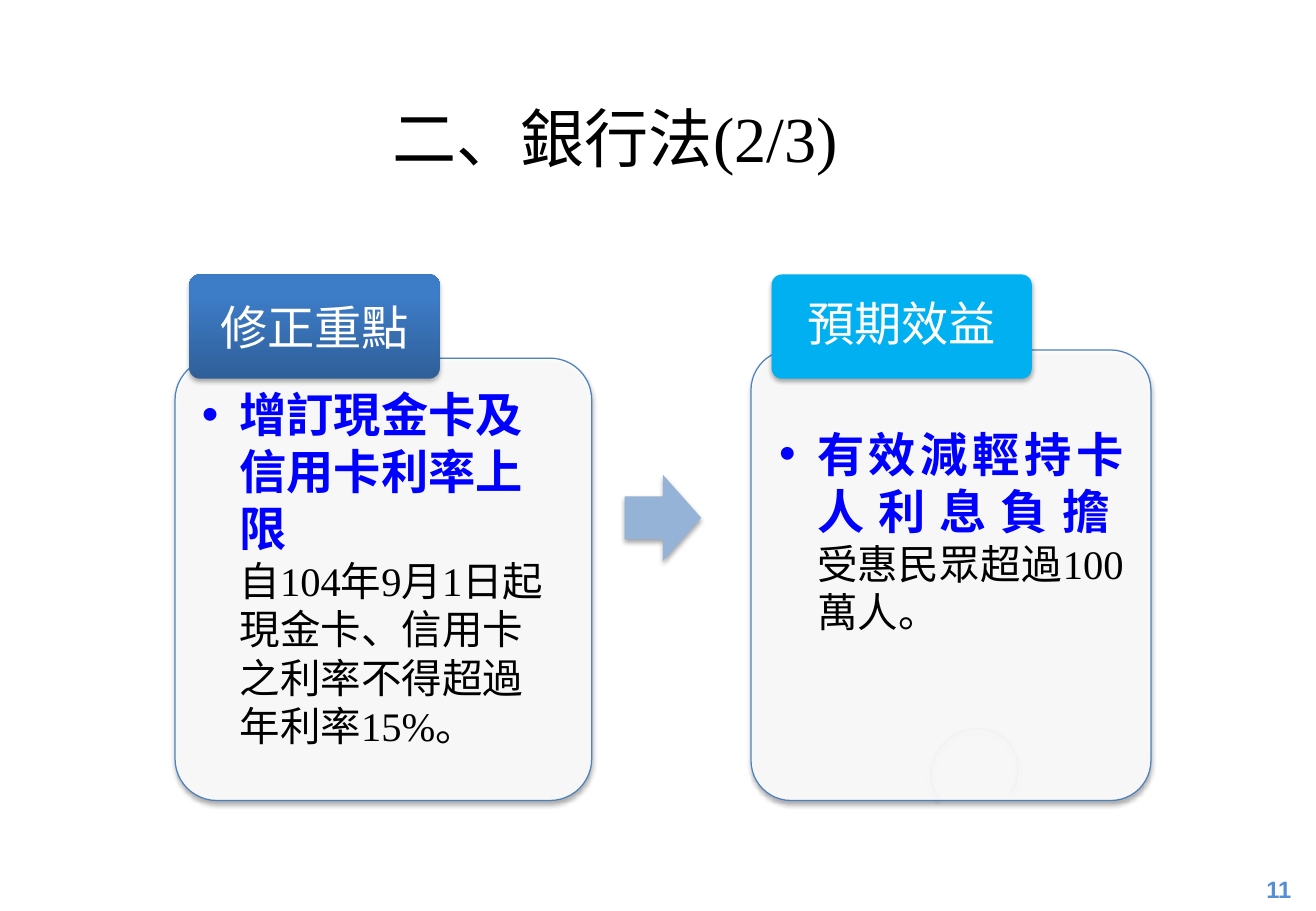
from lxml import etree
from pptx import Presentation
from pptx.dml.color import RGBColor
from pptx.enum import shapes, text
from pptx.oxml import ns
from pptx.util import Cm, Pt

WHITE = RGBColor(0xFF, 0xFF, 0xFF)
BLACK = RGBColor(0, 0, 0)
BLUE = RGBColor(0, 0, 0xFF)
EDGE = RGBColor(0x4F, 0x81, 0xBD)
DEEP = RGBColor(0x2F, 0x5F, 0x99)
MID = RGBColor(0x3D, 0x7C, 0xC7)
SKY = RGBColor(0x00, 0xB0, 0xF0)
ARROW = RGBColor(0x95, 0xB3, 0xD7)
RING = RGBColor(0x97, 0xAD, 0xD9)
PAGE = RGBColor(0x55, 0x8E, 0xD5)

KIND = shapes.MSO_SHAPE
ALIGN = text.PP_ALIGN
ANCHOR = text.MSO_ANCHOR
SERIF = "Times New Roman"


def sub(node, tag, **attrs):
    return etree.SubElement(node, ns.qn(tag), attrs)


def fade(fill, percent):
    """Set the opacity of a solid fill."""
    clr = fill._xPr.find(ns.qn("a:solidFill"))[0]
    sub(clr, "a:alpha", val=str(percent * 1000))


def shade(shape):
    """Give the shape a soft shadow below it."""
    shape.shadow.inherit = False
    effect = shape._element.spPr.find(ns.qn("a:effectLst"))
    drop = sub(effect, "a:outerShdw", blurRad=str(Pt(3.1)), dist=str(Pt(1.8)),
               dir="5400000", rotWithShape="0")
    sub(sub(drop, "a:srgbClr", val="000000"), "a:alpha", val="35000")


def block(slide, kind, box, fill, line=None, adj=()):
    """Add a preset shape; two colours in fill make a gradient upwards."""
    shape = slide.shapes.add_shape(kind, *map(Cm, box))
    for i, value in enumerate(adj):
        shape.adjustments[i] = value
    if isinstance(fill, list):
        shape.fill.gradient()
        shape.fill.gradient_angle = 90
        for stop, color, place in zip(shape.fill.gradient_stops, fill, (0, 0.8)):
            stop.color.rgb = color
            stop.position = place
    else:
        shape.fill.solid()
        shape.fill.fore_color.rgb = fill
    if line is None:
        shape.line.fill.background()
    else:
        shape.line.color.rgb = line
        shape.line.width = Pt(0.75)
    shade(shape)
    return shape


def write(shape, *lines, size=28, color=BLACK, bold=False, font=SERIF,
          align=ALIGN.LEFT, anchor=ANCHOR.TOP, inset=(0.25, 0.13),
          bullet=False, gap=None):
    """Fill one paragraph; a line is a string or (string, format overrides)."""
    frame = shape.text_frame
    frame.word_wrap = True
    frame.vertical_anchor = anchor
    frame.margin_left = frame.margin_right = Cm(inset[0])
    frame.margin_top = frame.margin_bottom = Cm(inset[1])
    para = frame.paragraphs[0]
    para.alignment = align
    if gap:
        para.line_spacing = gap
    if bullet:
        props = para._p.get_or_add_pPr()
        props.set("marL", str(Cm(0.79)))
        props.set("indent", str(Cm(-0.79)))
        sub(props, "a:buFont", typeface="Arial")
        sub(props, "a:buChar", char="•")
    for i, line in enumerate(lines):
        words, own = (line, {}) if isinstance(line, str) else line
        if i:
            para.add_line_break()
        run = para.add_run()
        run.text = words
        run.font.name = font
        run.font.size = Pt(own.get("size", size))
        run.font.bold = own.get("bold", bold)
        run.font.color.rgb = own.get("color", color)


def label(slide, box, *lines, **form):
    write(slide.shapes.add_textbox(*map(Cm, box)), *lines, **form)


def card(slide, box):
    shape = block(slide, KIND.ROUNDED_RECTANGLE, box, WHITE, EDGE, [0.1])
    fade(shape.fill, 90)


def tab(slide, box, fill, words, gap=None):
    shape = block(slide, KIND.ROUNDED_RECTANGLE, box, fill, adj=[0.1])
    write(shape, words, color=WHITE, align=ALIGN.CENTER,
          anchor=ANCHOR.MIDDLE, inset=(0.15, 0.1), gap=gap)


def main():
    deck = Presentation()
    deck.slide_width, deck.slide_height = Cm(27.51), Cm(19.05)
    slide = deck.slides.add_slide(deck.slide_layouts[6])
    point = dict(color=BLUE, bold=True, bullet=True)
    plain = dict(size=24, color=BLACK, bold=False)

    label(slide, (25.96, 18.14, 1.55, 0.91), "11", size=14, color=PAGE,
          bold=True, font="Arial", align=ALIGN.CENTER, anchor=ANCHOR.MIDDLE)
    label(slide, (7.95, 1.93, 11.81, 1.88), "二、銀行法(2/3)", size=38,
          align=ALIGN.JUSTIFY)

    card(slide, (3.66, 7.49, 8.71, 9.25))
    label(slide, (3.86, 7.7, 8.28, 6.83), "增訂現金卡及", "信用卡利率上限",
          ("自104年9月1日起現金卡、信用卡之利率不得超過年利率15%。", plain),
          inset=(0.36, 0.36), **point)
    ring = block(slide, KIND.CIRCULAR_ARROW, (19.41, 15.24, 1.93, 1.8), RING,
                 adj=[0.013, 1.536, 40.795, 111.749, 0.015])
    ring.rotation = 317.1
    tab(slide, (3.96, 5.74, 5.23, 2.18), [DEEP, MID], "修正重點")

    card(slide, (15.7, 7.32, 8.36, 9.42))
    label(slide, (15.93, 8.69, 7.92, 7.82), "有效減輕持卡人利息負擔",
          ("受惠民眾超過100萬人。", plain), align=ALIGN.JUSTIFY,
          inset=(0.36, 0.2), **point)
    tab(slide, (16.13, 5.74, 5.44, 2.18), SKY, "預期效益", gap=0.9)

    block(slide, KIND.RIGHT_ARROW, (13.06, 9.93, 1.6, 1.8), ARROW)
    deck.save("out.pptx")


if __name__ == "__main__":
    main()
